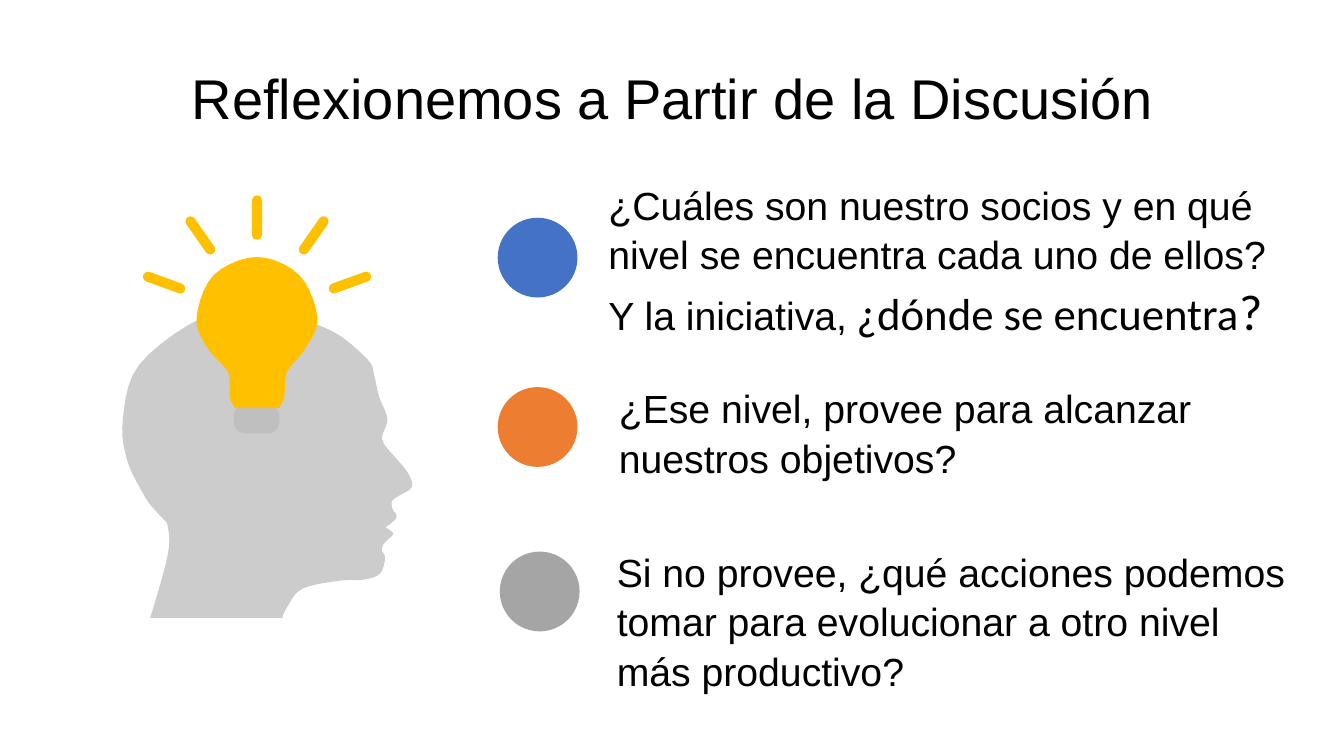
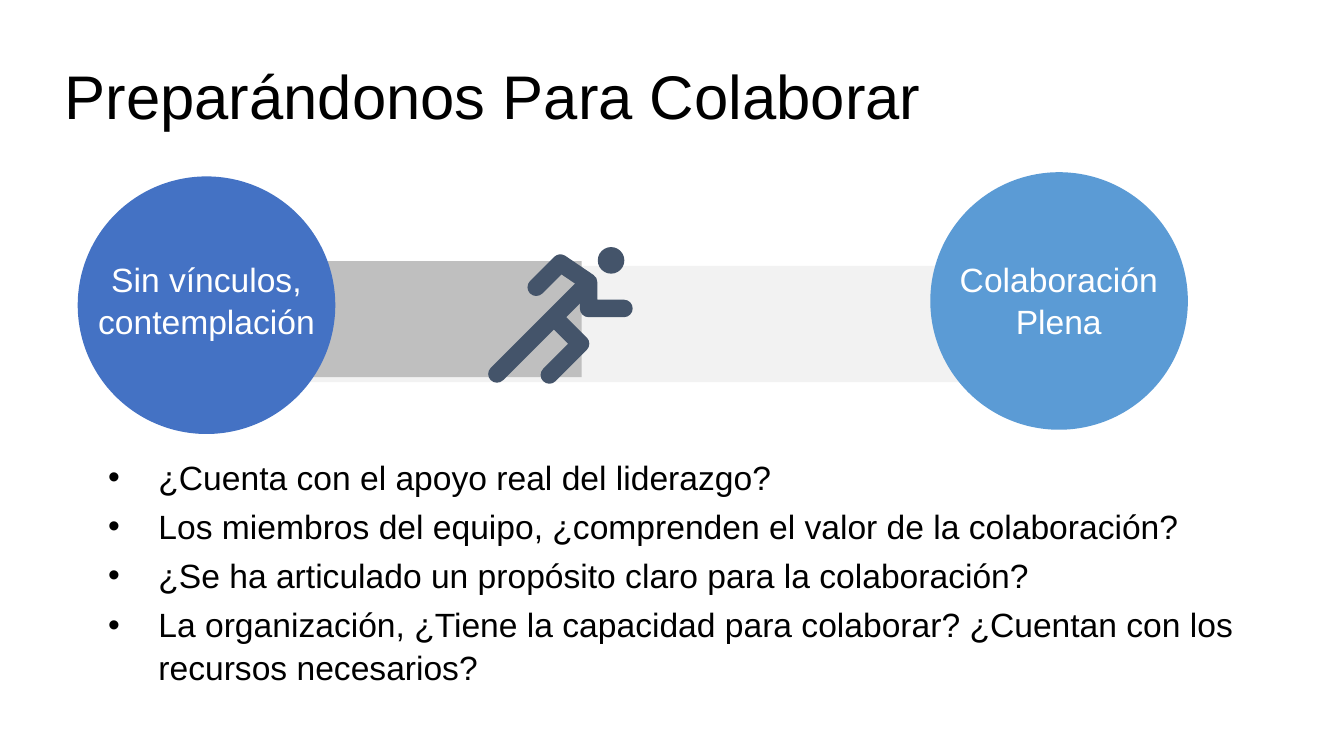
from dataclasses import dataclass
from math import cos, radians, sin

from lxml import etree
from pptx import Presentation
from pptx.dml.color import RGBColor
from pptx.enum.shapes import MSO_SHAPE
from pptx.enum.text import MSO_ANCHOR, MSO_AUTO_SIZE, PP_ALIGN
from pptx.oxml.ns import qn
from pptx.util import Pt

OVAL, RECT, ROUND = MSO_SHAPE.OVAL, MSO_SHAPE.RECTANGLE, MSO_SHAPE.ROUNDED_RECTANGLE
LEFT, CENTER = PP_ALIGN.LEFT, PP_ALIGN.CENTER
TOP, MIDDLE = MSO_ANCHOR.TOP, MSO_ANCHOR.MIDDLE

# Shared style
FONT = "Arial"
LINE_SPACING = 1.05
BLACK, WHITE = "000000", "FFFFFF"
BLUE, ORANGE, GRAY, SKY = "4472C4", "ED7D31", "A5A5A5", "5B9BD5"
GOLD, NAVY = "FFC000", "44546A"
HEAD_GRAY, MID_GRAY, PALE_GRAY = "CCCCCC", "BFBFBF", "F2F2F2"
TITLE_ONLY, TITLE_AND_BODY = 5, 1  # layouts of the default template
GRID = 0.72  # outline points lie on a grid of 0.72 pt


@dataclass
class Box:
    x: float
    y: float
    w: float
    h: float


@dataclass
class Run:
    text: str
    size: float
    font: str = FONT


@dataclass
class Question:
    color: str
    dot_x: float
    dot_y: float
    box: Box
    runs: list[Run]


@dataclass
class Stage:
    color: str
    circle: Box
    label: Box
    text: str


HEAD = [
    (149, 613), (156, 590), (165, 557), (168, 537), (166, 520), (163, 516),
    (153, 505), (144, 493), (126, 456), (122, 415), (138, 362), (199, 316),
    (252, 309), (295, 316), (334, 331), (365, 357), (371, 371), (376, 393),
    (383, 410), (384, 419), (379, 433), (380, 437), (382, 442), (395, 457),
    (404, 468), (409, 480), (406, 486), (399, 490), (389, 497), (390, 506),
    (393, 510), (393, 514), (387, 520), (383, 523), (387, 526), (390, 530),
    (383, 537), (380, 541), (379, 546), (382, 554), (377, 569), (361, 575),
    (337, 576), (300, 584), (285, 602), (280, 613),
]
BULB = [
    (233, 405), (228, 394), (228, 380), (225, 367), (205, 344), (195, 315),
    (212, 273), (255, 255), (297, 273), (315, 315), (304, 344), (286, 367),
    (283, 380), (282, 394), (277, 405),
]
RUNNER_LIMBS = [
    [(532, 285), (556, 261), (584, 280), (584, 306), (619, 306)],  # arms
    [(493, 371), (578, 286)],  # torso and back leg
    [(545, 372), (576, 341), (555, 320)],  # front leg
]

QUESTIONS = [
    Question(BLUE, 355.5, 155.5, Box(427.5, 124, 500.5, 152.5), [
        Run("¿Cuáles son nuestro socios y en qué nivel se encuentra cada uno "
            "de ellos? Y la iniciativa,", 28),
        Run(" ", 24),
        Run("¿dónde se encuentra", 32, "Calibri"),
        Run("?", 36, "Calibri"),
    ]),
    Question(ORANGE, 355.5, 276.5, Box(435, 269.5, 439, 75), [
        Run("¿Ese nivel, provee para alcanzar nuestros objetivos?", 28)]),
    Question(GRAY, 357, 394, Box(433.5, 386.5, 501, 108.5), [
        Run("Si no provee, ¿qué acciones podemos tomar para evolucionar a otro "
            "nivel más productivo?", 28)]),
]
STAGES = [
    Stage(BLUE, Box(55.5, 126, 184, 184), Box(60.5, 180, 174, 65.5),
          "Sin vínculos, contemplación"),
    Stage(SKY, Box(664.5, 123, 184, 184), Box(672, 180, 168.5, 65.5),
          "Colaboración Plena"),
]
CHECKLIST = [
    "¿Cuenta con el apoyo real del liderazgo?",
    "Los miembros del equipo, ¿comprenden el valor de la colaboración?",
    "¿Se ha articulado un propósito claro para la colaboración?",
    "La organización, ¿Tiene la capacidad para colaborar? ¿Cuentan con los "
    "recursos necesarios?",
]


def rgb(color: str) -> RGBColor:
    return RGBColor.from_string(color)


def place(sp, box: Box) -> None:
    sp.left, sp.top, sp.width, sp.height = map(Pt, (box.x, box.y, box.w, box.h))


def paint(sp, color: str):
    sp.fill.solid()
    sp.fill.fore_color.rgb = rgb(color)
    sp.line.fill.background()
    sp.shadow.inherit = False
    return sp


def add_shape(s, kind, box: Box, color: str):
    sp = s.shapes.add_shape(kind, 0, 0, 0, 0)
    place(sp, box)
    return paint(sp, color)


def smooth(points: list) -> list:
    """Sample a Catmull-Rom curve through the points."""
    ends = [points[0], *points, points[-1]]
    curve = []
    for a, b, c, d in zip(ends, ends[1:], ends[2:], ends[3:]):
        for t in (0, 0.2, 0.4, 0.6, 0.8):
            curve.append(tuple(
                q + t * (r - p + t * (2 * p - 5 * q + 4 * r - u
                                      + t * (3 * q - p - 3 * r + u))) / 2
                for p, q, r, u in zip(a, b, c, d)))
    return [*curve, points[-1]]


def add_outline(s, points: list, close: bool):
    pts = [(Pt(x * GRID), Pt(y * GRID)) for x, y in points]
    builder = s.shapes.build_freeform(*pts[0])
    builder.add_line_segments(pts[1:], close=close)
    return builder.convert_to_shape()


def add_limb(s, points: list, color: str) -> None:
    sp = add_outline(s, points, close=False)
    sp.fill.background()
    sp.shadow.inherit = False
    sp.line.color.rgb = rgb(color)
    sp.line.width = Pt(12.5)
    ln = sp.line._get_or_add_ln()
    ln.set("cap", "rnd")
    etree.SubElement(ln, qn("a:round"))


def style(p, size: float, color: str, align=LEFT) -> None:
    p.alignment = align
    p.line_spacing = LINE_SPACING
    p.space_before = Pt(0)
    p.font.size = Pt(size)
    p.font.name = FONT
    p.font.color.rgb = rgb(color)


def add_text(s, box: Box, runs: list[Run], color: str, align=LEFT) -> None:
    sp = s.shapes.add_textbox(0, 0, 0, 0)
    place(sp, box)
    tf = sp.text_frame
    tf.word_wrap = True
    p = tf.paragraphs[0]
    style(p, runs[0].size, color, align)
    for run in runs:
        r = p.add_run()
        r.text = run.text
        r.font.size = Pt(run.size)
        r.font.name = run.font


def fill_placeholder(sp, box: Box, lines: list[str], size: float, align, anchor) -> None:
    place(sp, box)
    tf = sp.text_frame
    tf.text = "\n".join(lines)
    tf.word_wrap = True
    tf.auto_size = MSO_AUTO_SIZE.NONE
    tf.vertical_anchor = anchor
    for p in tf.paragraphs:
        style(p, size, BLACK, align)


def add_slide(prs, layout: int, title: str, box: Box, size: float):
    s = prs.slides.add_slide(prs.slide_layouts[layout])
    fill_placeholder(s.shapes.title, box, [title], size, CENTER, MIDDLE)
    return s


def draw_idea(s) -> None:
    paint(add_outline(s, smooth(HEAD), close=True), HEAD_GRAY)
    socket = add_shape(s, ROUND, Box(167, 289, 32.5, 20.5), MID_GRAY)
    socket.adjustments[0] = 0.39
    paint(add_outline(s, smooth(BULB), close=True), GOLD)
    # Rays stand on an arc around the bulb
    w, h, radius = 7.2, 31.7, 70.6
    for angle in range(-70, 71, 35):
        x = 183.6 + radius * sin(radians(angle))
        y = 226 - radius * cos(radians(angle))
        ray = add_shape(s, ROUND, Box(x - w / 2, y - h / 2, w, h), GOLD)
        ray.adjustments[0] = 0.5
        ray.rotation = angle


def build_reflection(prs) -> None:
    s = add_slide(prs, TITLE_ONLY, "Reflexionemos a Partir de la Discusión",
                  Box(116, 40.5, 728.5, 55.5), 40)
    draw_idea(s)
    for q in QUESTIONS:
        add_shape(s, OVAL, Box(q.dot_x, q.dot_y, 57, 57), q.color)
        add_text(s, q.box, q.runs, BLACK)


def build_preparation(prs) -> None:
    s = add_slide(prs, TITLE_AND_BODY, "Preparándonos Para Colaborar",
                  Box(32.5, 36, 639.5, 60.5), 44)
    # Progress bar between the two stages
    add_shape(s, RECT, Box(165.5, 190, 612, 83), PALE_GRAY)
    add_shape(s, RECT, Box(160.5, 186.5, 255, 83), MID_GRAY)
    for stage in STAGES:
        add_shape(s, OVAL, stage.circle, stage.color)
        add_text(s, stage.label, [Run(stage.text, 24)], WHITE, CENTER)
    # Runner
    for limb in RUNNER_LIMBS:
        add_limb(s, limb, NAVY)
    add_shape(s, OVAL, Box(427, 176.5, 19, 19), NAVY)
    # Checklist
    body = s.placeholders[1]
    fill_placeholder(body, Box(70, 321, 818, 168), CHECKLIST, 24, LEFT, TOP)
    for p in body.text_frame.paragraphs:
        p.space_after = Pt(5)
        pPr = p._p.get_or_add_pPr()
        pPr.set("marL", str(Pt(36)))
        pPr.set("indent", str(-Pt(36)))


def main() -> None:
    prs = Presentation()
    prs.slide_width, prs.slide_height = Pt(960), Pt(540)
    build_reflection(prs)
    build_preparation(prs)
    prs.save("out.pptx")


if __name__ == "__main__":
    main()
